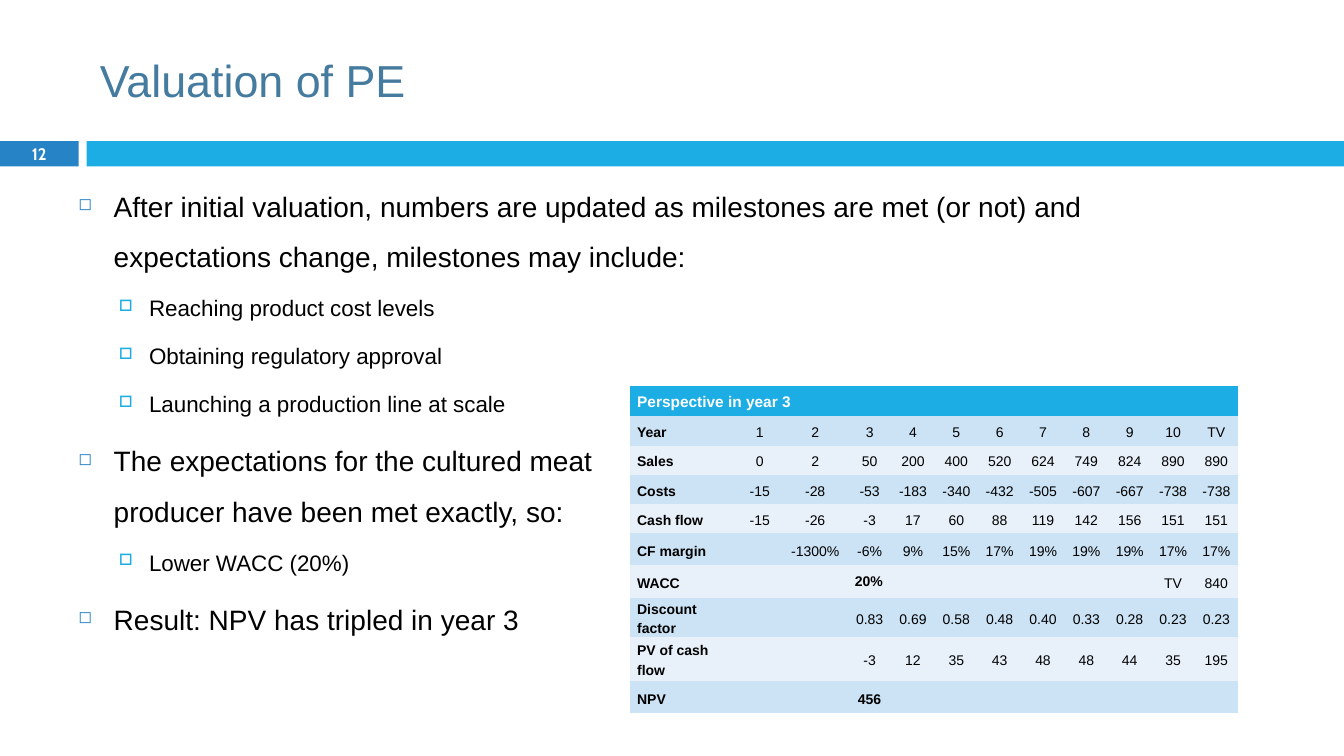
from dataclasses import dataclass
from typing import Any

from lxml.etree import SubElement
from pptx import Presentation
from pptx.dml.color import RGBColor as Rgb
from pptx.enum.shapes import MSO_SHAPE as Shape
from pptx.enum.text import MSO_ANCHOR as Anchor, MSO_AUTO_SIZE as Auto, PP_ALIGN as Align
from pptx.oxml.ns import qn
from pptx.util import Inches, Pt


@dataclass(frozen=True)
class Theme:
    face: str = "Arial"
    badge: str = "Cabin"
    title: str = "457B9E"
    blue: str = "2683C6"
    sky: str = "1CADE4"
    dark: str = "CCE3F5"
    pale: str = "E8F1FA"
    black: str = "000000"
    white: str = "FFFFFF"
    head: float = 32
    page: float = 11.9
    lead: float = 11
    cell: float = 10


@dataclass(frozen=True)
class Level:
    size: float
    before: float
    left: float
    hang: float
    mark: str
    tint: str
    scale: int


@dataclass(frozen=True)
class Bar:
    left: float
    width: float
    color: str


@dataclass(frozen=True)
class Item:
    text: str
    level: int = 0


LOOK = Theme()
LEVELS = (
    Level(20, 7, 0.35, 0.35, "◻", LOOK.blue, 60),
    Level(16, 5.5, 0.7, 0.3, "□", LOOK.sky, 70),
)
BARS = (Bar(0, 0.78, LOOK.blue), Bar(0.86, 12.47, LOOK.sky))
ITEMS = (
    Item("After initial valuation, numbers are updated as milestones are met (or not) "
         "and expectations change, milestones may include:"),
    Item("Reaching product cost levels", 1),
    Item("Obtaining regulatory approval", 1),
    Item("Launching a production line at scale", 1),
    Item("The expectations for the cultured meat\vproducer have been met exactly, so:"),
    Item("Lower WACC (20%)", 1),
    Item("Result: NPV has tripled in year 3"),
)
ROWS = [line.split("|") for line in (
    "Perspective in year 3",
    "Year|1|2|3|4|5|6|7|8|9|10|TV",
    "Sales|0|2|50|200|400|520|624|749|824|890|890",
    "Costs|-15|-28|-53|-183|-340|-432|-505|-607|-667|-738|-738",
    "Cash flow|-15|-26|-3|17|60|88|119|142|156|151|151",
    "CF margin||-1300%|-6%|9%|15%|17%|19%|19%|19%|17%|17%",
    "WACC|||20%|||||||TV|840",
    "Discount factor|||0.83|0.69|0.58|0.48|0.40|0.33|0.28|0.23|0.23",
    "PV of cash flow|||-3|12|35|43|48|48|44|35|195",
    "NPV|||456||||||||",
)]
WIDTHS = [1.06, 0.45, 0.65] + [0.43] * 9
HEIGHTS = [0.3] + [0.29] * 4 + [0.32, 0.32, 0.36, 0.44, 0.32]
RATE, NPV = (6, 3), (9, 3)
NO_GRID = "{2D5ABB26-0587-4C30-8999-92F81FD0307C}"


def apply(thing: Any, values: dict[str, Any]) -> None:
    for name, value in values.items():
        setattr(thing, name, value)


def place(left: float, top: float, width: float, height: float) -> list[Inches]:
    return [Inches(n) for n in (left, top, width, height)]


def write(para: Any, text: str, size: float, color: str,
          bold: bool = False, face: str = LOOK.face) -> None:
    para.text = text
    for run in para.runs:
        apply(run.font, {"name": face, "size": Pt(size), "bold": bold})
        run.font.color.rgb = Rgb.from_string(color)


def paint(thing: Any, color: str) -> None:
    thing.fill.solid()
    thing.fill.fore_color.rgb = Rgb.from_string(color)


def add_bars(slide: Any) -> None:
    for bar in BARS:
        shape = slide.shapes.add_shape(Shape.RECTANGLE, *place(bar.left, 1.4, bar.width, 0.25))
        shape.shadow.inherit = False
        paint(shape, bar.color)
        shape.line.fill.background()


def add_title(slide: Any) -> None:
    title = slide.shapes.title
    apply(title, dict(zip(("left", "top", "width", "height"), place(0.89, 0.25, 11.89, 1.08))))
    frame = title.text_frame
    apply(frame, {"vertical_anchor": Anchor.MIDDLE, "auto_size": Auto.NONE})
    write(frame.paragraphs[0], "Valuation of PE", LOOK.head, LOOK.title)
    frame.paragraphs[0].alignment = Align.LEFT


def add_page(slide: Any) -> None:
    frame = slide.shapes.add_textbox(*place(0, 1.39, 0.78, 0.27)).text_frame
    apply(frame, {"word_wrap": True, "vertical_anchor": Anchor.MIDDLE,
                  "margin_top": 0, "margin_bottom": 0})
    write(frame.paragraphs[0], "12", LOOK.page, LOOK.white, True, LOOK.badge)
    frame.paragraphs[0].alignment = Align.CENTER


def set_mark(para: Any, level: Level) -> None:
    """Give a paragraph its hanging bullet."""
    props = para._p.get_or_add_pPr()
    props.set("marL", str(Inches(level.left)))
    props.set("indent", str(-Inches(level.hang)))
    color = SubElement(props, qn("a:buClr"))
    SubElement(color, qn("a:srgbClr"), val=level.tint)
    SubElement(props, qn("a:buSzPct"), val=str(level.scale * 1000))
    SubElement(props, qn("a:buChar"), char=level.mark)


def add_body(slide: Any) -> None:
    frame = slide.shapes.add_textbox(*place(0.68, 1.66, 11.36, 5.39)).text_frame
    frame.word_wrap = True
    for num, item in enumerate(ITEMS):
        para = frame.add_paragraph() if num else frame.paragraphs[0]
        level = LEVELS[item.level]
        write(para, item.text, level.size, LOOK.black)
        apply(para, {"level": item.level, "line_spacing": 1.5, "space_before": Pt(level.before)})
        set_mark(para, level)


def fill_cell(cell: Any, row: int, col: int, text: str) -> None:
    apply(cell, {"vertical_anchor": Anchor.MIDDLE, "margin_left": Inches(0.07),
                 "margin_right": Inches(0.07), "margin_top": 0, "margin_bottom": 0})
    paint(cell, LOOK.sky if row == 0 else LOOK.dark if row % 2 else LOOK.pale)
    if not text:
        return
    para = cell.text_frame.paragraphs[0]
    size, color = (LOOK.cell, LOOK.black) if row else (LOOK.lead, LOOK.white)
    write(para, text, size, color, col == 0 or (row, col) in (RATE, NPV))
    if (row, col) != RATE:
        apply(para, {"alignment": Align.CENTER if col else Align.LEFT, "line_spacing": Pt(14),
                     "space_before": Pt(1), "space_after": Pt(1)})


def add_grid(slide: Any) -> None:
    spot = place(6.25, 3.83, sum(WIDTHS), sum(HEIGHTS))
    table = slide.shapes.add_table(len(ROWS), len(WIDTHS), *spot).table
    table._tbl.tblPr.find(qn("a:tableStyleId")).text = NO_GRID
    for col, width in zip(table.columns, WIDTHS):
        col.width = Inches(width)
    for row, height in zip(table.rows, HEIGHTS):
        row.height = Inches(height)
    table.cell(0, 0).merge(table.cell(0, len(WIDTHS) - 1))
    for row, texts in enumerate(ROWS):
        for col, text in enumerate(texts):
            fill_cell(table.cell(row, col), row, col, text)


def main() -> None:
    deck = Presentation()
    apply(deck, {"slide_width": Inches(13.33), "slide_height": Inches(7.5)})
    slide = deck.slides.add_slide(deck.slide_layouts.get_by_name("Title Only"))
    for draw in (add_bars, add_title, add_page, add_body, add_grid):
        draw(slide)
    deck.save("out.pptx")


if __name__ == "__main__":
    main()
